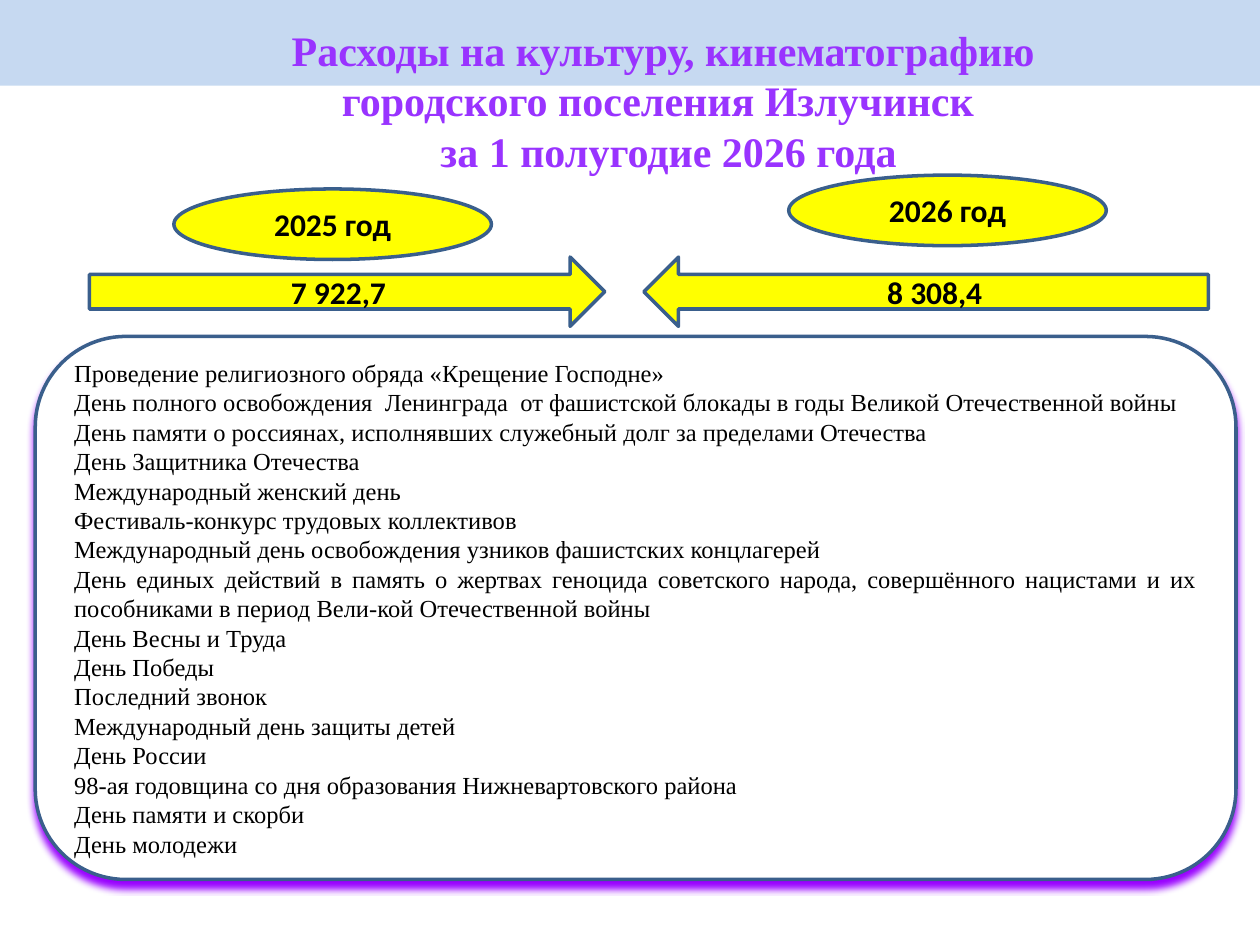
from lxml import etree
from pptx import Presentation
from pptx.dml.color import RGBColor
from pptx.enum.shapes import MSO_SHAPE
from pptx.enum.text import MSO_ANCHOR, PP_ALIGN
from pptx.oxml.ns import qn
from pptx.util import Inches, Pt

RECT, OVAL = MSO_SHAPE.RECTANGLE, MSO_SHAPE.OVAL
ROUNDED = MSO_SHAPE.ROUNDED_RECTANGLE
RIGHT, LEFT = MSO_SHAPE.RIGHT_ARROW, MSO_SHAPE.LEFT_ARROW
CENTER, JUSTIFY = PP_ALIGN.CENTER, PP_ALIGN.JUSTIFY
TOP, MIDDLE = MSO_ANCHOR.TOP, MSO_ANCHOR.MIDDLE

BAND = RGBColor(0xC6, 0xD9, 0xF1)
PURPLE = RGBColor(0x99, 0x33, 0xFF)
GLOW = RGBColor(0x99, 0x00, 0xFF)
YELLOW = RGBColor(0xFF, 0xFF, 0x00)
BORDER = RGBColor(0x3A, 0x5F, 0x8C)
WHITE = RGBColor(0xFF, 0xFF, 0xFF)
BLACK = RGBColor(0, 0, 0)
SERIF, SANS = "Times New Roman", "Calibri"

TITLE = [
    "Расходы на культуру, кинематографию ",
    "городского поселения Излучинск  ",
    "за 1 полугодие 2026 года",
]
EVENTS = [
    "Проведение религиозного обряда «Крещение Господне»",
    "День полного освобождения  Ленинграда  от фашистской блокады "
    "в годы Великой Отечественной войны",
    "День памяти о россиянах, исполнявших служебный долг за пределами Отечества",
    "День Защитника Отечества",
    "Международный женский день",
    "Фестиваль-конкурс трудовых коллективов",
    "Международный день освобождения узников фашистских концлагерей",
    "День единых действий в память о жертвах геноцида советского народа, "
    "совершённого нацистами и их пособниками в период Вели-кой Отечественной войны",
    "День Весны и Труда",
    "День Победы",
    "Последний звонок",
    "Международный день защиты детей",
    "День России",
    "98-ая годовщина со дня образования Нижневартовского района",
    "День памяти и скорби",
    "День молодежи",
]


def add_box(slide, kind, box, fill, line=None):
    s = slide.shapes.add_shape(kind, *(Inches(v) for v in box))
    s.shadow.inherit = False
    s.fill.solid()
    s.fill.fore_color.rgb = fill
    if line is None:
        s.line.fill.background()
    else:
        s.line.color.rgb = line
        s.line.width = Pt(2)
    return s


def write(s, lines, align, anchor, font, size, color, bold=False, spacing=None):
    tf = s.text_frame
    tf.word_wrap = True
    tf.vertical_anchor = anchor
    for i, text in enumerate(lines):
        p = tf.add_paragraph() if i else tf.paragraphs[0]
        p.alignment = align
        if spacing:
            p.line_spacing = Pt(spacing)
        r = p.add_run()
        r.text = text
        r.font.name = font
        r.font.size = Pt(size)
        r.font.bold = bold
        r.font.color.rgb = color


def add_glow(s):
    """Purple shadow falling straight down."""
    effects = s._element.spPr.find(qn("a:effectLst"))
    shadow = etree.SubElement(
        effects, qn("a:outerShdw"), blurRad=str(Pt(4)), dist=str(Pt(4)),
        dir=str(90 * 60000), algn="ctr", rotWithShape="0")
    etree.SubElement(shadow, qn("a:srgbClr"), val=str(GLOW))


def add_header(slide, band, box):
    add_box(slide, RECT, band, BAND)
    s = slide.shapes.add_textbox(*(Inches(v) for v in box))
    write(s, TITLE, CENTER, TOP, SERIF, 24, PURPLE, bold=True, spacing=28.9)


def add_year(slide, oval, arrow, kind, year, amount):
    for shape, box, text in ((kind, arrow, amount), (OVAL, oval, year)):
        s = add_box(slide, shape, box, YELLOW, BORDER)
        write(s, [text], CENTER, MIDDLE, SANS, 18, BLACK, bold=True)


def add_events(slide, box):
    s = add_box(slide, ROUNDED, box, WHITE, BORDER)
    add_glow(s)
    write(s, EVENTS, JUSTIFY, MIDDLE, SERIF, 14, BLACK, spacing=16.8)


def main():
    prs = Presentation()
    prs.slide_width, prs.slide_height = Inches(10), Inches(7.5)
    slide = prs.slides.add_slide(prs.slide_layouts[6])

    # Title over the pale band
    add_header(slide, (0, 0, 10, 0.68), (1.04, 0.14, 8.53, 1.25))

    # Spending by year
    add_year(slide, (1.38, 1.5, 2.52, 0.56), (0.71, 2.04, 4.09, 0.55),
             RIGHT, "2025 год", "7 922,7")
    add_year(slide, (6.26, 1.39, 2.52, 0.56), (5.11, 2.04, 4.48, 0.55),
             LEFT, "2026 год", "8 308,4")

    # List of events
    add_events(slide, (0.28, 2.67, 9.53, 4.31))
    prs.save("out.pptx")


if __name__ == "__main__":
    main()
